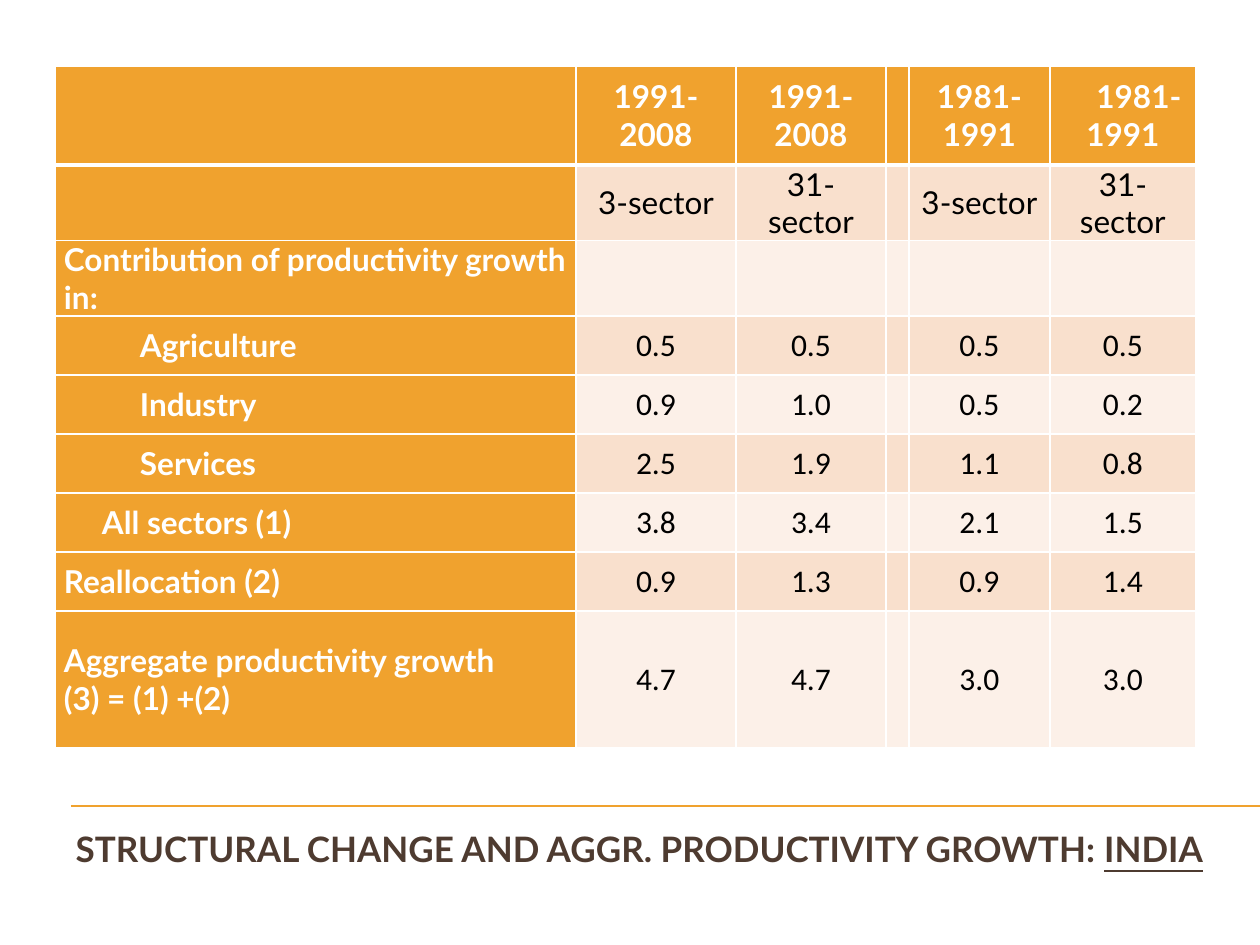
from lxml.etree import SubElement
from pptx import Presentation
from pptx.dml.color import RGBColor
from pptx.enum.shapes import MSO_CONNECTOR
from pptx.enum.text import MSO_ANCHOR, MSO_AUTO_SIZE, PP_ALIGN
from pptx.oxml.ns import qn
from pptx.util import Emu, Pt

COLORS = {"accent": "F0A22E", "title": "4E3B30", "white": "FFFFFF",
          "black": "000000", "dark_band": "F9E0CD", "light_band": "FCF0E8"}


def px(n):
    return Emu(round(n * 914400 / 126))


def add_run(p, text, size, color, bold, font="Lato"):
    r = p.add_run()
    r.text = text
    r.font.name, r.font.size, r.font.bold = font, Pt(size), bold
    r.font.color.rgb = RGBColor.from_string(COLORS[color])
    return r


prs = Presentation()
prs.slide_width, prs.slide_height = px(1260), px(945)
s = prs.slides.add_slide(prs.slide_layouts[5])

# Rule above the title
rule = s.shapes.add_connector(MSO_CONNECTOR.STRAIGHT, px(71), px(806), px(1260), px(806))
rule.line.color.rgb = RGBColor.from_string(COLORS["accent"])
rule.line.width = Pt(0.75)
SubElement(rule._element.spPr, qn("a:effectLst"))

# Title
title = s.shapes.title
title.left, title.top, title.width, title.height = px(63), px(812), px(1165), px(72)
tf = title.text_frame
tf.word_wrap = True
tf.auto_size = MSO_AUTO_SIZE.NONE
tf.vertical_anchor = MSO_ANCHOR.MIDDLE
p = tf.paragraphs[0]
p.alignment = PP_ALIGN.LEFT
add_run(p, "STRUCTURAL CHANGE AND AGGR. PRODUCTIVITY GROWTH: ", 20, "title", True)
add_run(p, "INDIA", 20, "title", True).font.underline = True

# Table contents; the narrow fourth column separates the two periods
rows = [
    ["", "1991-\n2008", "1991-2008", "", "1981-\n1991", "1981-1991"],
    ["", "3-sector", "31-sector", "", "3-sector", "31-sector"],
    ["Contribution of productivity growth in:", "", "", "", "", ""],
    ["Agriculture", "0.5", "0.5", "", "0.5", "0.5"],
    ["Industry", "0.9", "1.0", "", "0.5", "0.2"],
    ["Services", "2.5", "1.9", "", "1.1", "0.8"],
    ["All sectors (1)", "3.8", "3.4", "", "2.1", "1.5"],
    ["Reallocation (2)", "0.9", "1.3", "", "0.9", "1.4"],
    ["Aggregate productivity growth \n(3) = (1) +(2)", "4.7", "4.7", "", "3.0", "3.0"],
]
label_indents = {"Agriculture": 76, "Industry": 76, "Services": 76, "All sectors (1)": 38}
col_widths = [521, 160, 150, 23, 141, 146]
row_heights = [99, 52] + [59] * 6 + [137]

table = s.shapes.add_table(len(rows), len(col_widths), px(55), px(66),
                           px(sum(col_widths)), px(sum(row_heights))).table
for col, width in zip(table.columns, col_widths):
    col.width = px(width)
for row, height in zip(table.rows, row_heights):
    row.height = px(height)

for i, row in enumerate(rows):
    for j, text in enumerate(row):
        cell = table.cell(i, j)
        heading = i == 0 or j == 0
        cell.vertical_anchor = MSO_ANCHOR.MIDDLE
        cell.margin_left = cell.margin_right = px(9)
        cell.margin_top = cell.margin_bottom = 0

        # White borders, thicker under the header row
        tcPr = cell._tc.get_or_add_tcPr()
        for side in ("L", "R", "T", "B"):
            thick = (i, side) in ((0, "B"), (1, "T"))
            ln = SubElement(tcPr, qn(f"a:ln{side}"), w=str(Pt(3 if thick else 1)))
            SubElement(SubElement(ln, qn("a:solidFill")), qn("a:srgbClr"), val=COLORS["white"])

        band = "accent" if heading else "dark_band" if i % 2 else "light_band"
        cell.fill.solid()
        cell.fill.fore_color.rgb = RGBColor.from_string(COLORS[band])
        if not text:
            continue

        # Cell text
        p = cell.text_frame.paragraphs[0]
        p.alignment = PP_ALIGN.CENTER if j else PP_ALIGN.LEFT
        if text in label_indents:
            p._p.get_or_add_pPr().set("marL", str(px(label_indents[text])))
        if (i, j) == (0, 5):
            p._p.get_or_add_pPr().set("indent", str(px(32)))
        for k, line in enumerate(text.split("\n")):
            if k:
                p.add_line_break()
            add_run(p, line, 18, "white" if heading else "black", heading,
                    "Calibri" if j and i > 2 else "Lato")

prs.save("out.pptx")
